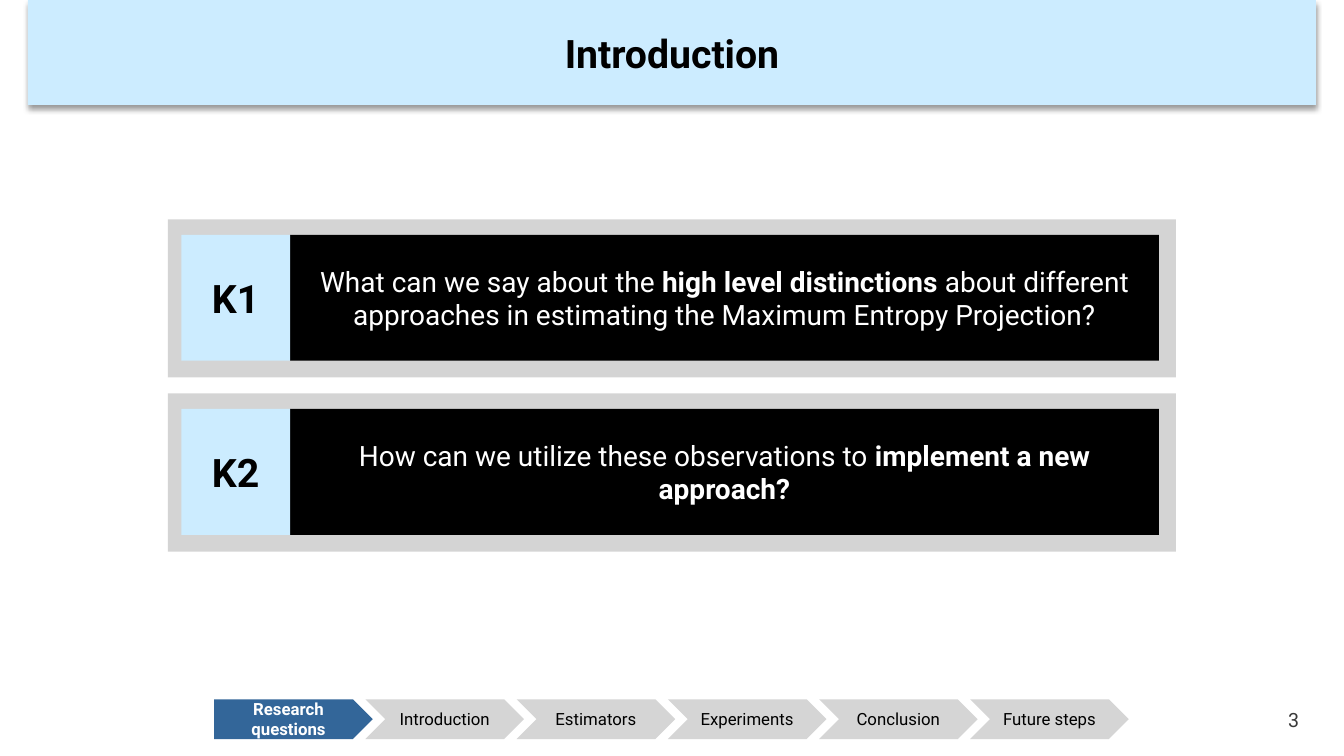
from dataclasses import dataclass

from lxml import etree
from pptx import Presentation
from pptx import util as u
from pptx.dml import color
from pptx.enum import shapes, text
from pptx.oxml import ns

Pt = u.Pt
Kind = shapes.MSO_SHAPE


@dataclass(frozen=True)
class Theme:
    font: str = "Roboto"
    sky: str = "CCECFF"
    black: str = "000000"
    white: str = "FFFFFF"
    frame: str = "ABABAB"
    step: str = "D5D5D5"
    active: str = "336699"
    number: str = "3A3A3A"
    head: int = 28
    body: int = 20
    page: int = 14
    crumb: int = 12


THEME = Theme()


def style(item, values):
    for name, value in values.items():
        setattr(item, name, value)


def write(shape, runs, size, ink, align=text.PP_ALIGN.CENTER, inset=7.2):
    frame = shape.text_frame
    style(frame, {
        "word_wrap": True,
        "vertical_anchor": text.MSO_ANCHOR.MIDDLE,
        "margin_left": Pt(inset),
        "margin_right": Pt(inset),
    })
    para = frame.paragraphs[0]
    para.alignment = align
    for words, bold in runs:
        run = para.add_run()
        run.text = words
        style(run.font, {"name": THEME.font, "size": Pt(size), "bold": bold})
        run.font.color.rgb = color.RGBColor.from_string(ink)


def block(owner, kind, box, fill):
    shape = owner.add_shape(kind, *map(Pt, box))
    shape.shadow.inherit = False
    shape.fill.solid()
    shape.fill.fore_color.rgb = color.RGBColor.from_string(fill)
    shape.line.fill.background()
    return shape


def fade(parent, percent):
    etree.SubElement(parent, ns.qn("a:alpha"), val=str(percent * 1000))


def shade(shape):
    effects = shape._element.spPr.find(ns.qn("a:effectLst"))
    outer = etree.SubElement(
        effects, ns.qn("a:outerShdw"), blurRad=str(Pt(4)), dist=str(Pt(3)),
        dir="5400000", algn="t", rotWithShape="0")
    fade(etree.SubElement(outer, ns.qn("a:srgbClr"), val=THEME.black), 40)


def header(slide, title):
    bar = block(slide.shapes, Kind.RECTANGLE, (20, 0, 920, 75), THEME.sky)
    shade(bar)
    write(bar, [(title, True)], THEME.head, THEME.black)


def question(slide, top, label, runs):
    group = slide.shapes.add_group_shape().shapes
    back = block(group, Kind.RECTANGLE, (120, top, 720, 113), THEME.frame)
    fade(back.fill._xPr.find(".//" + ns.qn("a:srgbClr")), 50)
    panel = block(group, Kind.RECTANGLE, (207.2, top + 11, 620.6, 90), THEME.black)
    write(panel, runs, THEME.body, THEME.white)
    key = block(group, Kind.RECTANGLE, (129.5, top + 11, 77.7, 90), THEME.sky)
    write(key, [(label, True)], THEME.head, THEME.black)


def crumbs(slide, names, current):
    group = slide.shapes.add_group_shape().shapes
    for index, name in enumerate(names):
        active = name == current
        kind = Kind.CHEVRON if index else Kind.PENTAGON
        fill = THEME.active if active else THEME.step
        ink = THEME.white if active else THEME.black
        step = block(group, kind, (153 + 108 * index, 499.5, 113.3, 28.4), fill)
        write(step, [(name, active)], THEME.crumb, ink, inset=5)


def number(slide, value):
    box = slide.shapes.add_textbox(*map(Pt, (913, 499.5, 27.5, 29)))
    write(box, [(value, False)], THEME.page, THEME.number, text.PP_ALIGN.LEFT)


def main():
    deck = Presentation()
    style(deck, {"slide_width": Pt(960), "slide_height": Pt(540)})
    slide = deck.slides.add_slide(deck.slide_layouts[6])
    header(slide, "Introduction")
    asks = [
        [("What can we say about the ", False),
         ("high level distinctions ", True),
         ("about different approaches in estimating the Maximum Entropy Projection?", False)],
        [("How can we utilize these observations to ", False),
         ("implement a new approach?", True)],
    ]
    for index, runs in enumerate(asks):
        question(slide, 156.7 + 124.3 * index, f"K{index + 1}", runs)
    names = ["Research questions", "Introduction", "Estimators",
             "Experiments", "Conclusion", "Future steps"]
    crumbs(slide, names, names[0])
    number(slide, "3")
    deck.save("out.pptx")


if __name__ == "__main__":
    main()
